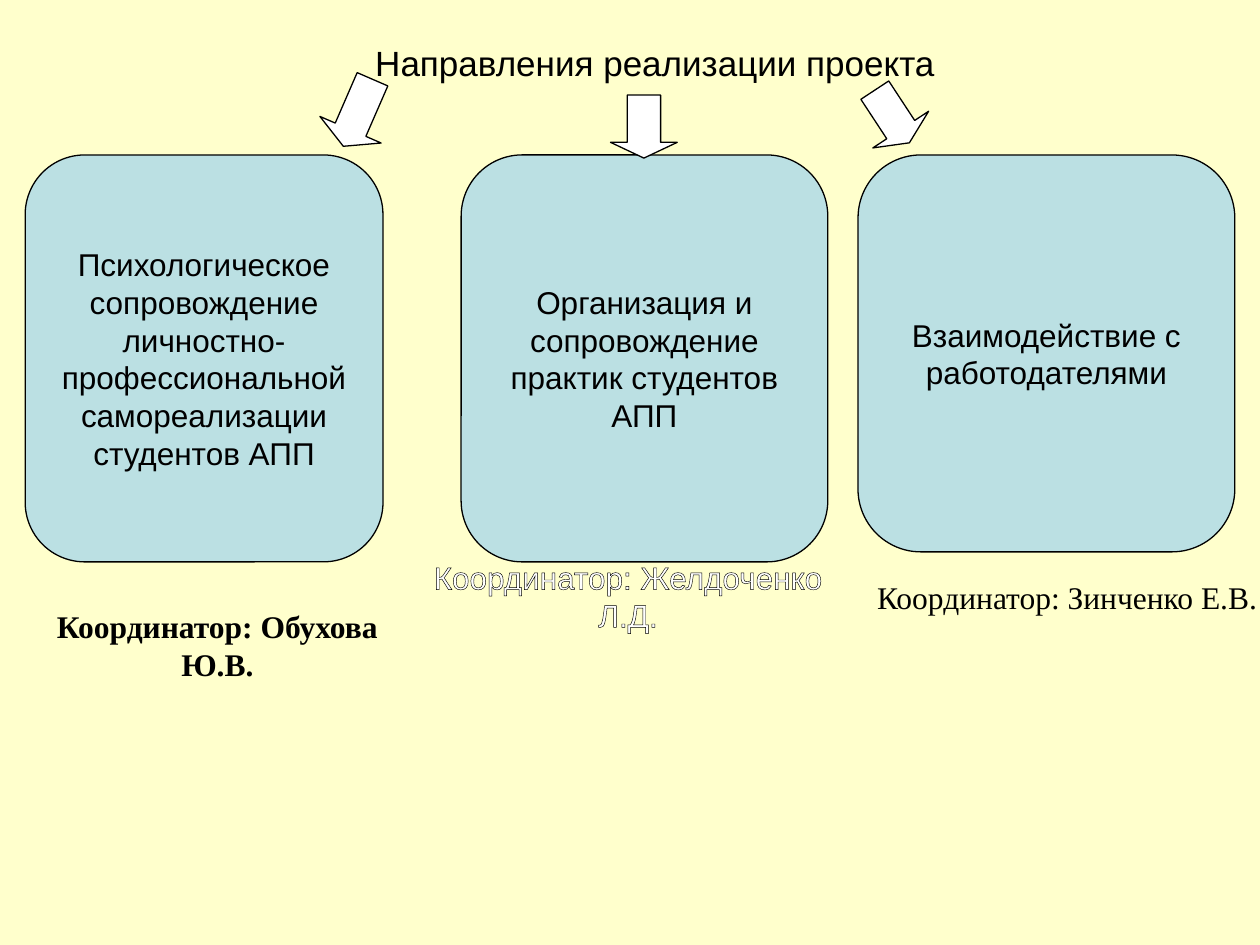
from lxml.etree import SubElement
from pptx import Presentation
from pptx.dml.color import RGBColor
from pptx.enum.shapes import MSO_SHAPE
from pptx.enum.text import MSO_ANCHOR, MSO_AUTO_SIZE, PP_ALIGN
from pptx.oxml.ns import qn
from pptx.util import Inches, Pt

# Content: text, (left, top, width, height) in inches
TITLE = ("Направления реализации проекта", (2.95, 0.28, 4.5, 0.33))
DIRECTIONS = [
    ("Психологическое сопровождение личностно-профессиональной "
     "самореализации студентов АПП", (0.2, 1.23, 2.84, 3.23)),
    ("Организация и сопровождение практик студентов АПП", (3.66, 1.23, 2.91, 3.23)),
    ("Взаимодействие с работодателями", (6.81, 1.23, 2.99, 3.15)),
]
COORDINATORS = [
    ("Координатор: Обухова Ю.В.", (0.2, 4.77, 3.05, 0.28), "bold"),
    ("Координатор: Желдоченко Л.Д.", (3.35, 4.38, 3.27, 0.28), "hollow"),
    ("Координатор: Зинченко Е.В.", (6.94, 4.54, 3.06, 0.33), "serif"),
]
# Arrows: place, rotation, head length
ARROWS = [
    ((2.55, 0.63, 0.58, 0.53), 113.5, 0.27),
    ((4.86, 0.74, 0.5, 0.53), 90, 0.25),
    ((6.83, 0.66, 0.5, 0.53), 56.7, 0.25),
]

THEME = {
    "background": "FFFFCC", "card": "BBE0E3", "arrow": "FFFFFF",
    "line": "000000", "line_width": 0.75,
    "text": {
        "title": {"name": "Arial", "size": 20, "color": "000000", "outline": True},
        "card": {"name": "Arial", "size": 18, "color": "000000"},
        "bold": {"name": "Times New Roman", "size": 18, "color": "000000", "bold": True},
        "hollow": {"name": "Arial", "size": 18, "color": "FFFFFF", "outline": True},
        "serif": {"name": "Times New Roman", "size": 18, "color": "000000", "outline": True},
    },
}
LABEL_FORMAT = {"word_wrap": False, "auto_size": MSO_AUTO_SIZE.SHAPE_TO_FIT_TEXT,
                "margin_left": 0, "margin_right": 0}
CARD_FORMAT = {"word_wrap": True, "vertical_anchor": MSO_ANCHOR.MIDDLE}


def set_formats(target, formats):
    for name, value in formats.items():
        setattr(target, name, value)


def outline_letters(span):
    properties = span._r.get_or_add_rPr()
    line = SubElement(properties, qn("a:ln"), w=str(Pt(THEME["line_width"])))
    fill = SubElement(line, qn("a:solidFill"))
    SubElement(fill, qn("a:srgbClr"), val=THEME["line"])
    properties.insert(0, line)


def write(box, text, style_name):
    style = THEME["text"][style_name]
    para = box.text_frame.paragraphs[0]
    para.alignment = PP_ALIGN.CENTER
    span = para.add_run()
    span.text = text
    set_formats(span.font, {"name": style["name"], "size": Pt(style["size"]),
                            "bold": style.get("bold", False)})
    span.font.color.rgb = RGBColor.from_string(style["color"])
    if style.get("outline"):
        outline_letters(span)


def add_label(page, text, place, style_name):
    box = page.shapes.add_textbox(*map(Inches, place))
    set_formats(box.text_frame, LABEL_FORMAT)
    write(box, text, style_name)


def add_figure(page, kind, place, color):
    shape = page.shapes.add_shape(kind, *map(Inches, place))
    shape.shadow.inherit = False
    shape.fill.solid()
    shape.fill.fore_color.rgb = RGBColor.from_string(color)
    shape.line.color.rgb = RGBColor.from_string(THEME["line"])
    shape.line.width = Pt(THEME["line_width"])
    return shape


def main():
    deck = Presentation()
    deck.slide_width, deck.slide_height = Inches(10), Inches(7.5)
    page = deck.slides.add_slide(deck.slide_layouts[6])
    page.background.fill.solid()
    page.background.fill.fore_color.rgb = RGBColor.from_string(THEME["background"])

    # Heading
    add_label(page, *TITLE, "title")

    # Direction cards
    for text, place in DIRECTIONS:
        card = add_figure(page, MSO_SHAPE.ROUNDED_RECTANGLE, place, THEME["card"])
        set_formats(card.text_frame, CARD_FORMAT)
        write(card, text, "card")

    # Arrows from the heading to the cards
    for place, rotation, head in ARROWS:
        arrow = add_figure(page, MSO_SHAPE.RIGHT_ARROW, place, THEME["arrow"])
        arrow.rotation = rotation
        arrow.adjustments[1] = head

    # Coordinators under the cards
    for text, place, style_name in COORDINATORS:
        add_label(page, text, place, style_name)

    deck.save("out.pptx")


if __name__ == "__main__":
    main()
